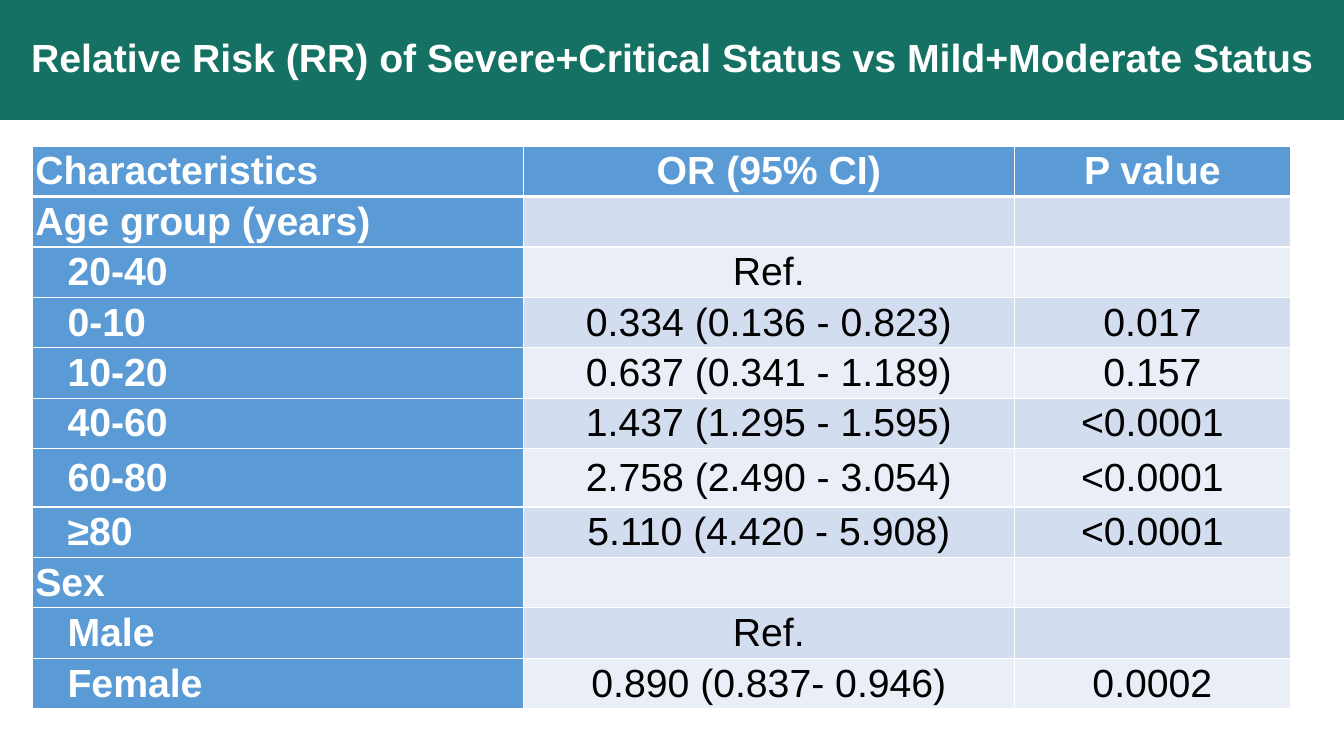
import pptx
import pptx.util
import pptx.dml.color
import pptx.enum.text
import pptx.oxml
import pptx.oxml.ns
from dataclasses import dataclass

Inches = pptx.util.Inches
Align = pptx.enum.text.PP_ALIGN
Anchor = pptx.enum.text.MSO_ANCHOR

TITLE = "Relative Risk (RR) of Severe+Critical Status vs Mild+Moderate Status"
HEADINGS = ("Characteristics", "OR (95% CI)", "P value")
GROUPS = {
    "Age group (years)": [
        ("20-40", "Ref.", ""),
        ("0-10", "0.334 (0.136 - 0.823)", "0.017"),
        ("10-20", "0.637 (0.341 - 1.189)", "0.157"),
        ("40-60", "1.437 (1.295 - 1.595)", "<0.0001"),
        ("60-80", "2.758 (2.490 - 3.054)", "<0.0001"),
        ("≥80", "5.110 (4.420 - 5.908)", "<0.0001"),
    ],
    "Sex": [
        ("Male", "Ref.", ""),
        ("Female", "0.890 (0.837- 0.946)", "0.0002"),
    ],
}
COLUMN_WIDTHS = (4.87, 4.87, 2.74)
ROW_HEIGHT = 0.5
TALL_ROWS = {"60-80": 0.58}
SIDE_MARGIN, VERTICAL_MARGIN, LEVEL_INDENT = 0.03, 0.02, 0.32


@dataclass(frozen=True)
class Theme:
    banner: str = "157163"
    heading: str = "5B9BD5"
    bands: tuple = ("D2DEEF", "EAEFF7")
    light: str = "FFFFFF"
    dark: str = "000000"
    font: str = "Arial"
    size: int = 28
    rule: int = 1
    heading_rule: int = 3


THEME = Theme()


def rgb(value):
    return pptx.dml.color.RGBColor.from_string(value)


def style_text(paragraph, color, bold, alignment):
    paragraph.alignment = alignment
    font = paragraph.font
    font.name, font.size, font.bold = THEME.font, pptx.util.Pt(THEME.size), bold
    font.color.rgb = rgb(color)


def set_borders(cell, top, bottom):
    properties = cell._tc.get_or_add_tcPr()
    sides = (("lnL", THEME.rule), ("lnR", THEME.rule), ("lnT", top), ("lnB", bottom))
    for position, (side, weight) in enumerate(sides):
        properties.insert(position, pptx.oxml.parse_xml(
            f'<a:{side} {pptx.oxml.ns.nsdecls("a")} w="{pptx.util.Pt(weight)}">'
            f'<a:solidFill><a:srgbClr val="{THEME.light}"/></a:solidFill></a:{side}>'))


def add_title(slide):
    banner = slide.shapes.title
    banner.left, banner.top = Inches(0), Inches(0)
    banner.width, banner.height = Inches(13.33), Inches(1.19)
    banner.fill.solid()
    banner.fill.fore_color.rgb = rgb(THEME.banner)
    frame = banner.text_frame
    frame.text = TITLE
    frame.word_wrap = True
    frame.vertical_anchor = Anchor.MIDDLE
    frame.paragraphs[0].line_spacing = 0.9
    style_text(frame.paragraphs[0], THEME.light, True, Align.CENTER)


def add_risk_table(slide):
    records = [(HEADINGS, 0)]
    for group, members in GROUPS.items():
        records.append(((group, "", ""), 0))
        records.extend((member, LEVEL_INDENT) for member in members)
    heights = [TALL_ROWS.get(values[0], ROW_HEIGHT) for values, _ in records]

    risks = slide.shapes.add_table(
        len(records), len(HEADINGS), Inches(0.32), Inches(1.45),
        Inches(sum(COLUMN_WIDTHS)), Inches(sum(heights))).table
    risks.first_col = True
    risks.horz_banding = False
    for column, width in zip(risks.columns, COLUMN_WIDTHS):
        column.width = Inches(width)

    for row, ((values, indent), height) in enumerate(zip(records, heights)):
        risks.rows[row].height = Inches(height)
        for column, value in enumerate(values):
            is_heading = row == 0 or column == 0
            cell = risks.cell(row, column)
            cell.text = value
            cell.vertical_anchor = Anchor.MIDDLE
            cell.margin_left = Inches(SIDE_MARGIN + (indent if column == 0 else 0))
            cell.margin_right = Inches(SIDE_MARGIN)
            cell.margin_top = cell.margin_bottom = Inches(VERTICAL_MARGIN)
            cell.fill.solid()
            cell.fill.fore_color.rgb = rgb(
                THEME.heading if is_heading else THEME.bands[(row - 1) % 2])
            style_text(cell.text_frame.paragraphs[0],
                       THEME.light if is_heading else THEME.dark, is_heading,
                       Align.LEFT if column == 0 else Align.CENTER)
            set_borders(cell,
                        THEME.heading_rule if row == 1 else THEME.rule,
                        THEME.heading_rule if row == 0 else THEME.rule)


def main():
    deck = pptx.Presentation()
    deck.slide_width, deck.slide_height = Inches(13.33), Inches(7.5)
    slide = deck.slides.add_slide(deck.slide_layouts[5])
    add_risk_table(slide)
    add_title(slide)
    deck.save("out.pptx")


if __name__ == "__main__":
    main()
